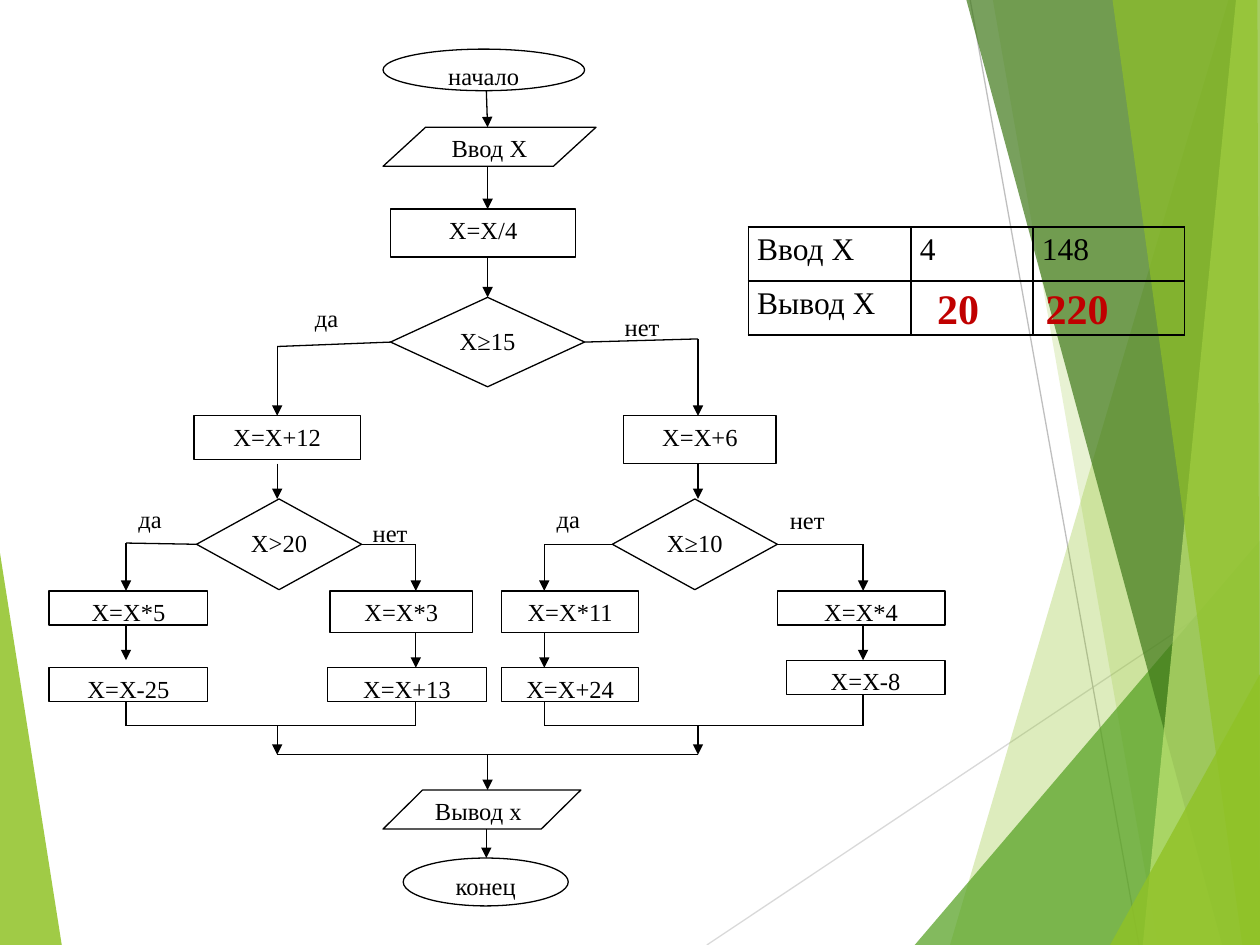
from dataclasses import dataclass
from lxml.etree import SubElement
from pptx import Presentation
from pptx.dml.color import RGBColor as Rgb
from pptx.enum.shapes import MSO_CONNECTOR as Link, MSO_SHAPE as Form
from pptx.enum.text import MSO_ANCHOR as Anchor, PP_ALIGN as Align
from pptx.oxml.ns import qn
from pptx.util import Inches, Pt


@dataclass(frozen=True)
class Theme:
    """Hold the colours, font and sizes."""
    face: str = "Times New Roman"
    ink: str = "000000"
    paper: str = "FFFFFF"
    mark: str = "C00000"
    lime: str = "90C226"
    pale: str = "C0E474"
    green: str = "54A021"
    dark: str = "3F7819"
    gray: str = "BFBFBF"
    mist: str = "D9D9D9"
    small: int = 14
    body: int = 18
    big: int = 24
    thin: float = 0.75


T = Theme()


def write(frame, text, size=T.small, color=T.ink, bold=False,
          align=Align.LEFT, after=0, lead=None, side=0.1):
    """Put formatted text in a text frame."""
    frame.word_wrap = True
    frame.vertical_anchor = Anchor.TOP
    frame.margin_left = frame.margin_right = Inches(side)
    par = frame.paragraphs[0]
    par.alignment = align
    par.space_after = Pt(after)
    if lead:
        par.line_spacing = lead
    run = par.add_run()
    run.text = text
    run.font.name = T.face
    run.font.size = Pt(size)
    run.font.bold = bold
    run.font.color.rgb = Rgb.from_string(color)


def label(slide, box, text, **style):
    """Add a text box."""
    shape = slide.shapes.add_textbox(*map(Inches, box))
    write(shape.text_frame, text, **style)


def node(slide, form, box, text, align=Align.CENTER):
    """Add one flowchart symbol."""
    shape = slide.shapes.add_shape(form, *map(Inches, box))
    shape.shadow.inherit = False
    shape.fill.solid()
    shape.fill.fore_color.rgb = Rgb.from_string(T.paper)
    shape.line.color.rgb = Rgb.from_string(T.ink)
    shape.line.width = Pt(T.thin)
    side = 0 if form == Form.DIAMOND else 0.1
    write(shape.text_frame, text, align=align, after=10, side=side)
    return shape


def port(nodes, x, y):
    """Find the symbol and side whose middle lies at a point."""
    for item in nodes:
        if item.auto_shape_type not in (Form.RECTANGLE, Form.DIAMOND):
            continue
        left, top, wide, high = item.left, item.top, item.width, item.height
        sides = ((left + wide / 2, top), (left, top + high / 2),
                 (left + wide / 2, top + high), (left + wide, top + high / 2))
        for side, (a, b) in enumerate(sides):
            if max(abs(a - Inches(x)), abs(b - Inches(y))) < Inches(0.012):
                return item, side
    return None


def wire(slide, start, end, arrow=False, color=T.ink, nodes=()):
    """Draw a straight line and join it to the symbols it meets."""
    line = slide.shapes.add_connector(Link.STRAIGHT, *map(Inches, (*start, *end)))
    line.line.color.rgb = Rgb.from_string(color)
    line.line.width = Pt(T.thin)
    if arrow:
        SubElement(line.line._get_or_add_ln(), qn("a:tailEnd"), type="triangle")
    SubElement(line._element.spPr, qn("a:effectLst"))
    for point, join in ((start, line.begin_connect), (end, line.end_connect)):
        found = port(nodes, *point)
        if found:
            join(*found)


def facet(slide, points, color, alpha):
    """Draw one translucent polygon."""
    first, *rest = [(Inches(x), Inches(y)) for x, y in points]
    pen = slide.shapes.build_freeform(*first)
    pen.add_line_segments(rest, close=True)
    shape = pen.convert_to_shape()
    shape.shadow.inherit = False
    shape.fill.solid()
    shape.fill.fore_color.rgb = Rgb.from_string(color)
    tint = shape.fill._xPr.find(".//" + qn("a:srgbClr"))
    SubElement(tint, qn("a:alpha"), val=str(alpha * 1000))
    shape.line.fill.background()


def backdrop(slide, box):
    """Draw the green facets at both edges."""
    left, top, wide, high = box
    right, foot = left + wide, top + high
    facet(slide, [(left, top + 4.39), (left + 0.49, foot), (left, foot)], T.lime, 85)
    wire(slide, (left + 5.61, foot), (right, top + 4.57), color=T.mist)
    wire(slide, (left + 7.7, top), (left + 9.04, foot), color=T.gray)
    for head, base, drop, edge, color, alpha in (
            (9.75, 7.54, 0, 10, T.lime, 30), (7.88, 9.19, 0, 10, T.lime, 20),
            (10, 7.26, 4.29, 10, T.green, 72), (7.67, 9.7, 0, 10, T.dark, 70),
            (9.81, 9.07, 0, 10, T.pale, 70), (8.83, 9.86, 0, 9.98, T.lime, 65),
            (10, 8.81, 5.35, 10, T.lime, 80)):
        facet(slide, [(left + head, top + drop), (left + base, foot),
                      (right, foot), (left + edge, top + drop)], color, alpha)


def chart(slide, box):
    """Draw the branching flowchart."""
    left, top = box[:2]
    rect, rhomb, data = Form.RECTANGLE, Form.DIAMOND, Form.FLOWCHART_DATA
    nodes = [node(slide, form, (left + x, top + y, w, h), text, *align)
             for form, x, y, w, h, text, *align in (
        (Form.OVAL, 2.65, 0, 1.6, 0.33, "начало"),
        (data, 2.65, 0.62, 1.69, 0.31, "Ввод Х"),
        (rect, 2.71, 1.27, 1.47, 0.38, "Х=Х/4"),
        (rhomb, 2.71, 1.97, 1.54, 0.71, "Х≥15"),
        (rect, 1.15, 2.91, 1.32, 0.35, "Х=Х+12"),
        (rect, 4.56, 2.91, 1.21, 0.38, "Х=Х+6"),
        (rhomb, 1.17, 3.57, 1.31, 0.72, "Х>20"),
        (rhomb, 4.47, 3.57, 1.31, 0.72, "Х≥10"),
        (rect, 0, 4.3, 1.26, 0.27, "Х=Х*5"),
        (rect, 2.23, 4.3, 1.13, 0.33, "Х=Х*3"),
        (rect, 3.59, 4.3, 1.09, 0.33, "Х=Х*11"),
        (rect, 5.78, 4.3, 1.33, 0.27, "Х=Х*4"),
        (rect, 0, 4.91, 1.26, 0.27, "Х=Х-25"),
        (rect, 2.21, 4.91, 1.26, 0.27, "Х=Х+13"),
        (rect, 3.59, 4.91, 1.09, 0.27, "Х=Х+24"),
        (rect, 5.85, 4.85, 1.26, 0.27, "Х=Х-8"),
        (data, 2.65, 5.88, 1.57, 0.31, "Вывод х", Align.LEFT),
        (Form.OVAL, 2.81, 6.42, 1.31, 0.38, "конец"))]

    def run(x, y, to_x, to_y, arrow=False):
        """Draw a line in the box's own units."""
        wire(slide, (left + x, top + y), (left + to_x, top + to_y), arrow, nodes=nodes)

    mid, west, east = 3.48, 1.81, 5.15
    for x, y, to_x, to_y in ((3.47, 0.33, mid, 0.62), (mid, 0.93, mid, 1.27),
                             (mid, 1.65, mid, 1.97), (mid, 5.6, mid, 5.88),
                             (3.47, 6.19, 3.47, 6.42)):
        run(x, y, to_x, to_y, True)
    run(2.71, 2.33, west, 2.36)
    run(4.25, 2.33, east, 2.3)
    run(west, 5.6, east, 5.6)
    for x, turn, yes, no in ((west, 2.36, 0.61, 2.91), (east, 2.3, 3.93, 6.46)):
        run(x, turn, x, 2.91, True)
        run(x, 3.29, x, 3.57, True)
        run(yes, 5.37, no, 5.37)
        run(x, 5.37, x, 5.6, True)
    for x, tip, y, foot, step, base in (
            (0.61, 1.17, 3.92, 4.57, 4.85, 5.18), (2.91, 2.48, 3.93, 4.63, 4.91, 5.18),
            (3.93, 4.47, 3.93, 4.63, 4.91, 5.18), (6.46, 5.78, 3.93, 4.57, 4.85, 5.12)):
        run(tip, 3.93, x, y)
        run(x, y, x, 4.3, True)
        run(x, foot, x, step, True)
        run(x, base, x, 5.37)
    for x, y, text in ((2.01, 1.97, "да"), (4.47, 2.04, "нет"), (0.61, 3.56, "да"),
                       (3.93, 3.56, "да"), (2.47, 3.67, "нет"), (5.78, 3.57, "нет")):
        label(slide, (left + x, top + y, 0.65, 0.26), text, after=10)


def border(cell):
    """Give a cell thin black edges."""
    props = cell._tc.get_or_add_tcPr()
    for at, side in enumerate(("lnL", "lnR", "lnT", "lnB")):
        edge = SubElement(props, qn("a:" + side), w=str(Pt(1)))
        fill = SubElement(edge, qn("a:solidFill"))
        SubElement(fill, qn("a:srgbClr"), val=T.ink)
        props.insert(at, edge)


def grid(slide, box):
    """Add the table of inputs and the answers over it."""
    left, top = box[:2]
    rows = (("Ввод Х", "4", "148"), ("Вывод Х", "", ""))
    table = slide.shapes.add_table(2, 3, *map(Inches, box)).table
    table.first_row = table.horz_banding = False
    for col, wide in zip(table.columns, (1.29, 0.97, 1.2)):
        col.width = Inches(wide)
    for row, texts in zip(table.rows, rows):
        row.height = Inches(box[3] / 2)
        for cell, text in zip(row.cells, texts):
            cell.fill.background()
            border(cell)
            if text:
                write(cell.text_frame, text, size=T.body, lead=1.15)
            cell.margin_left = cell.margin_right = Inches(0.07)
            cell.margin_top = cell.margin_bottom = 0
    for x, wide, text in ((1.4, 0.7, "20"), (2.26, 1.02, "220")):
        label(slide, (left + x, top + 0.39, wide, 0.5), text,
              size=T.big, color=T.mark, bold=True)


def main():
    """Build and save the slide."""
    deck = Presentation()
    deck.slide_width, deck.slide_height = Inches(10), Inches(7.5)
    slide = deck.slides.add_slide(deck.slide_layouts[6])
    backdrop(slide, (0, 0, 10, 7.5))
    chart(slide, (0.39, 0.39, 7.11, 6.8))
    grid(slide, (5.94, 1.8, 3.46, 0.86))
    deck.save("out.pptx")


if __name__ == "__main__":
    main()
